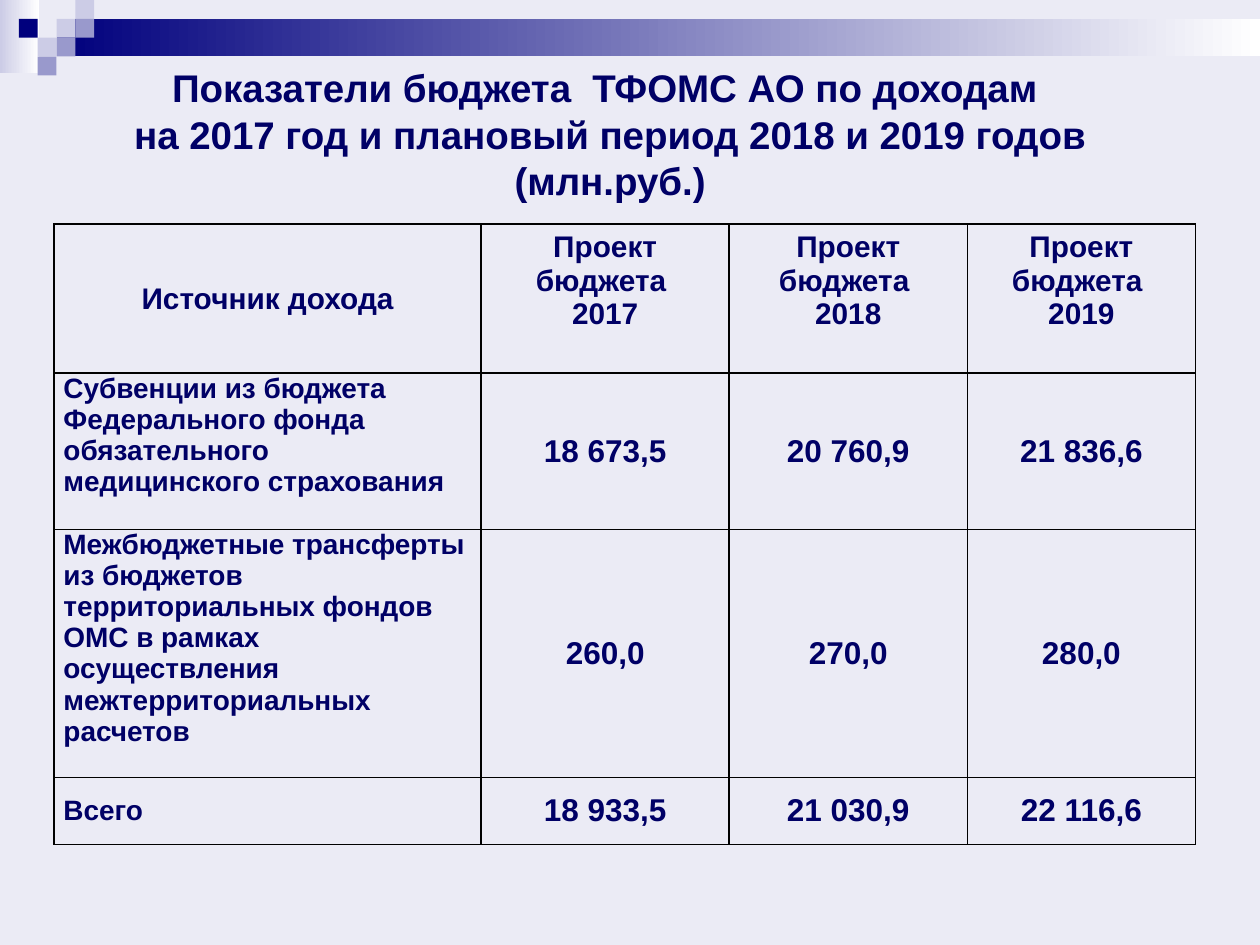
from lxml.etree import SubElement
from pptx import Presentation
from pptx.dml.color import RGBColor
from pptx.enum.shapes import MSO_SHAPE
from pptx.enum.text import MSO_ANCHOR, PP_ALIGN
from pptx.oxml.ns import qn
from pptx.util import Cm, Pt

NAVY, TEXT, LILAC, VIOLET = "00007D", "000066", "CCCCE6", "9999CC"
WHITE, BLACK, PAGE = "FFFFFF", "000000", "EBEBF5"

TITLE = ("Показатели бюджета  ТФОМС АО по доходам \v"
         "на 2017 год и плановый период 2018 и 2019 годов (млн.руб.)")
YEARS = ("2017", "2018", "2019")
ROWS = [
    ["Источник дохода"] + [f"Проект бюджета \n{year}" for year in YEARS],
    ["Субвенции из бюджета Федерального фонда обязательного "
     "медицинского страхования", "18 673,5", "20 760,9", "21 836,6"],
    ["Межбюджетные трансферты из бюджетов территориальных фондов ОМС "
     "в рамках осуществления межтерриториальных расчетов",
     "260,0", "270,0", "280,0"],
    ["Всего", "18 933,5", "21 030,9", "22 116,6"],
]
COLUMN_WIDTHS = (8.61, 5, 4.8, 4.6)
ROW_HEIGHTS = (3, 3.15, 5, 1.35)


def colour(value):
    return RGBColor.from_string(value)


def set_values(target, values):
    for name, value in values.items():
        setattr(target, name, value)


def write(frame, text, size, align):
    frame.text = text
    for para in frame.paragraphs:
        para.alignment = align
        for span in para.runs:
            set_values(span.font, {"name": "Arial", "size": Pt(size), "bold": True})
            span.font.color.rgb = colour(TEXT)


def add_block(page, left, top, width, height, *colours):
    """Add a rectangle with one plain colour or a gradient of two."""
    block = page.shapes.add_shape(MSO_SHAPE.RECTANGLE, Cm(left), Cm(top),
                                  Cm(width), Cm(height))
    block.shadow.inherit = False
    block.line.fill.background()
    if len(colours) == 1:
        block.fill.solid()
        block.fill.fore_color.rgb = colour(colours[0])
        return
    block.fill.gradient()
    block.fill.gradient_angle = 0
    for stop, value in zip(block.fill.gradient_stops, colours):
        stop.color.rgb = colour(value)


def add_header_band(page, left, top, width, tile):
    add_block(page, left, top, 0.79, 1.47, LILAC, WHITE)
    add_block(page, left + 3 * tile, top + tile, width - 3 * tile, 2 * tile,
              NAVY, WHITE)
    # Small squares on a grid: column, row, colour
    for column, row, value in ((3, 1, LILAC), (4, 0, LILAC), (4, 1, VIOLET),
                               (2, 2, LILAC), (1, 1, NAVY), (3, 2, VIOLET),
                               (2, 3, VIOLET)):
        add_block(page, left + column * tile, top + row * tile, tile, tile, value)


def add_title(page, left, top, width, height):
    title = page.shapes.title
    set_values(title, {"left": Cm(left), "top": Cm(top),
                       "width": Cm(width), "height": Cm(height)})
    set_values(title.text_frame, {
        "word_wrap": True, "vertical_anchor": MSO_ANCHOR.MIDDLE,
        "margin_left": Cm(1), "margin_right": Cm(1),
        "margin_top": 0, "margin_bottom": 0})
    write(title.text_frame, TITLE, 22, PP_ALIGN.CENTER)


def add_borders(cell):
    properties = cell._tc.get_or_add_tcPr()
    for position, side in enumerate(("lnL", "lnR", "lnT", "lnB")):
        line = SubElement(properties, qn(f"a:{side}"), w=str(Pt(1)))
        fill = SubElement(line, qn("a:solidFill"))
        SubElement(fill, qn("a:srgbClr"), val=BLACK)
        properties.insert(position, line)


def cell_style(row, column):
    """Return text size, alignment and anchor for a place in the table."""
    if row == 0:
        anchor = MSO_ANCHOR.TOP if column else MSO_ANCHOR.MIDDLE
        return 17, PP_ALIGN.CENTER, anchor
    if column:
        return 18, PP_ALIGN.CENTER, MSO_ANCHOR.MIDDLE
    last = row == len(ROWS) - 1
    return 16, PP_ALIGN.LEFT, MSO_ANCHOR.MIDDLE if last else MSO_ANCHOR.TOP


def add_income_table(page, left, top):
    table = page.shapes.add_table(
        len(ROWS), len(COLUMN_WIDTHS), Cm(left), Cm(top),
        Cm(sum(COLUMN_WIDTHS)), Cm(sum(ROW_HEIGHTS))).table
    set_values(table, {"first_row": False, "horz_banding": False})
    for column, width in zip(table.columns, COLUMN_WIDTHS):
        column.width = Cm(width)
    for row, height in zip(table.rows, ROW_HEIGHTS):
        row.height = Cm(height)
    for row, texts in enumerate(ROWS):
        for column, text in enumerate(texts):
            cell = table.cell(row, column)
            size, align, anchor = cell_style(row, column)
            write(cell.text_frame, text, size, align)
            inset = 0.13 if row == 0 and column else 0
            set_values(cell, {
                "vertical_anchor": anchor,
                "margin_left": Cm(0.19), "margin_right": Cm(0.19),
                "margin_top": Cm(inset), "margin_bottom": Cm(inset)})
            cell.fill.background()
            add_borders(cell)


def main():
    deck = Presentation()
    set_values(deck, {"slide_width": Cm(25.4), "slide_height": Cm(19.05)})
    page = deck.slides.add_slide(deck.slide_layouts[5])
    page.background.fill.solid()
    page.background.fill.fore_color.rgb = colour(PAGE)
    add_header_band(page, 0, 0, 25.4, 0.38)
    add_title(page, 0.5, 1.32, 23.6, 2.75)
    add_income_table(page, 1.09, 4.52)
    deck.save("out.pptx")


if __name__ == "__main__":
    main()
